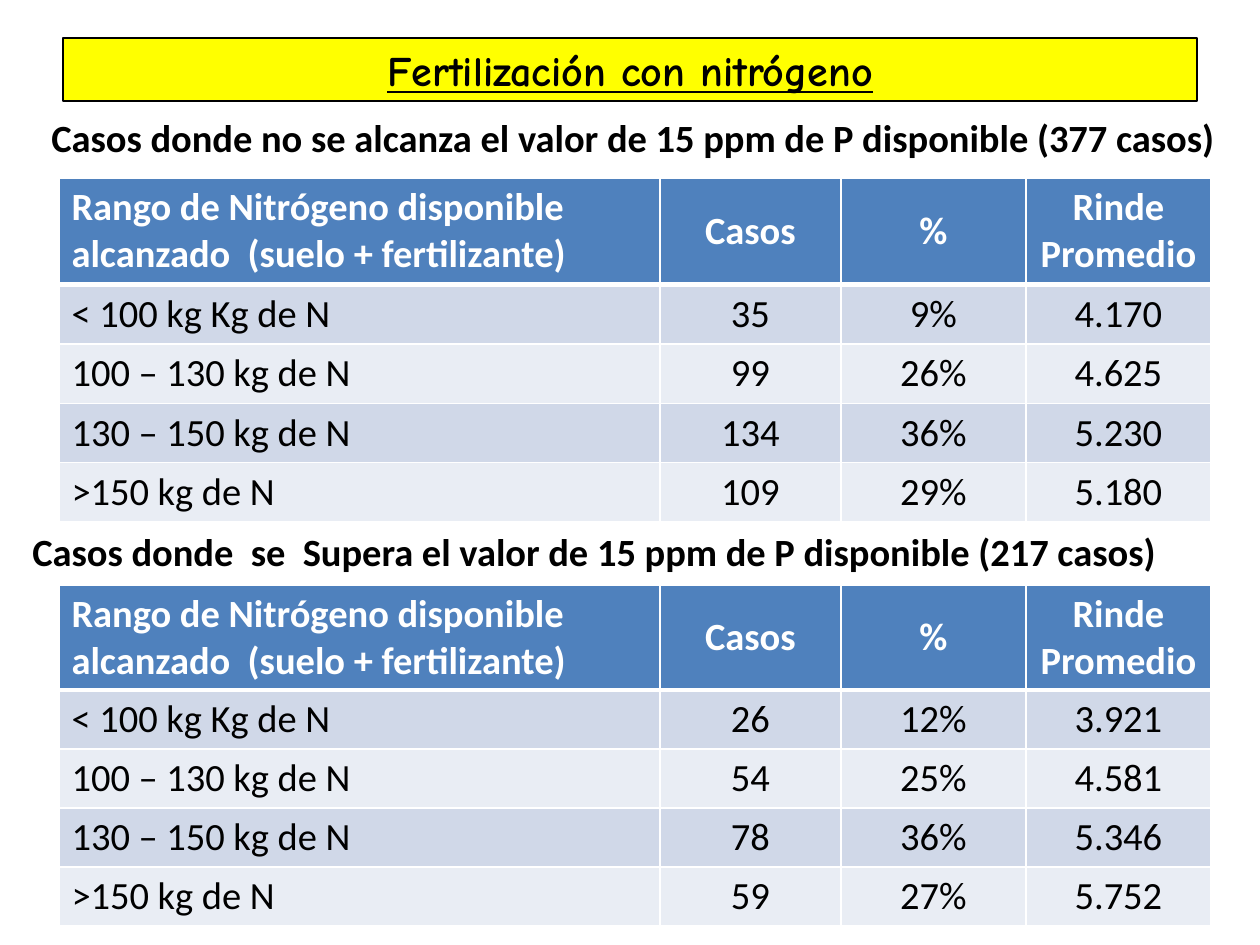
from lxml.etree import SubElement
from pptx import Presentation
from pptx.dml.color import RGBColor
from pptx.enum.text import MSO_ANCHOR, MSO_AUTO_SIZE, PP_ALIGN
from pptx.oxml.ns import qn
from pptx.util import Emu, Pt

SCALE = 914400 / 126
COLUMN_WIDTHS = [601, 181, 185, 185]
HEADER_HEIGHT = 103
ROW_HEIGHT = 59
HEADERS = ["Rango de Nitrógeno disponible alcanzado  (suelo + fertilizante)",
           "Casos", "%", "Rinde Promedio"]
RANGES = ["< 100 kg Kg de N", "100 – 130 kg de N", "130 – 150 kg de N", ">150 kg de N"]
LOW_PHOSPHORUS = [("35", "9%", "4.170"), ("99", "26%", "4.625"),
                  ("134", "36%", "5.230"), ("109", "29%", "5.180")]
HIGH_PHOSPHORUS = [("26", "12%", "3.921"), ("54", "25%", "4.581"),
                   ("78", "36%", "5.346"), ("59", "27%", "5.752")]


def px(length):
    return Emu(round(length * SCALE))


def color(value):
    return RGBColor.from_string(value)


def fill_with(target, value):
    target.fill.solid()
    target.fill.fore_color.rgb = color(value)


def add_run(paragraph, text, size=22, font="Calibri", ink="000000", bold=False, underline=None):
    run = paragraph.add_run()
    run.text = text
    run.font.size = Pt(size)
    run.font.name = font
    run.font.bold = bold
    run.font.underline = underline
    run.font.color.rgb = color(ink)


def set_borders(cell, top, bottom):
    properties = cell._tc.get_or_add_tcPr()
    widths = {"a:lnL": 1, "a:lnR": 1, "a:lnT": top, "a:lnB": bottom}
    for position, (side, width) in enumerate(widths.items()):
        line = SubElement(properties, qn(side), w=str(Pt(width)))
        fill = SubElement(line, qn("a:solidFill"))
        SubElement(fill, qn("a:srgbClr"), val="FFFFFF")
        properties.insert(position, line)


def place_title(slide, left, top, width, height):
    title = slide.shapes.title
    title.left, title.top, title.width, title.height = map(px, (left, top, width, height))
    fill_with(title, "FFFF00")
    title.line.color.rgb = color("000000")
    title.line.width = Pt(0.75)
    frame = title.text_frame
    frame.auto_size = MSO_AUTO_SIZE.NONE
    frame.vertical_anchor = MSO_ANCHOR.MIDDLE
    paragraph = frame.paragraphs[0]
    paragraph.alignment = PP_ALIGN.CENTER
    add_run(paragraph, "Fertilización con nitrógeno", 24, "Comic Neue", bold=True, underline=True)


def add_caption(slide, left, top, width, height, text):
    shape = slide.shapes.add_textbox(*map(px, (left, top, width, height)))
    frame = shape.text_frame
    frame.word_wrap = True
    frame.auto_size = MSO_AUTO_SIZE.SHAPE_TO_FIT_TEXT
    add_run(frame.paragraphs[0], text, bold=True)


def format_cell(cell, text, row, column):
    header = row == 0
    fill_with(cell, "4F81BD" if header else ("E9EDF4", "D0D8E8")[row % 2])
    set_borders(cell, 3 if row == 1 else 1, 3 if header else 1)
    paragraph = cell.text_frame.paragraphs[0]
    if column > 0:
        cell.vertical_anchor = MSO_ANCHOR.MIDDLE
        paragraph.alignment = PP_ALIGN.CENTER
    if column > 1 and not header:
        cell.margin_left = cell.margin_right = cell.margin_top = cell.margin_bottom = 0
    add_run(paragraph, text, ink="FFFFFF" if header else "000000", bold=header)


def add_yield_table(slide, left, top, results):
    rows = [HEADERS] + [[label, *values] for label, values in zip(RANGES, results)]
    height = HEADER_HEIGHT + ROW_HEIGHT * len(results)
    table = slide.shapes.add_table(len(rows), len(HEADERS), px(left), px(top),
                                   px(sum(COLUMN_WIDTHS)), px(height)).table
    for column, width in zip(table.columns, COLUMN_WIDTHS):
        column.width = px(width)
    for row, texts in enumerate(rows):
        table.rows[row].height = px(ROW_HEIGHT if row else HEADER_HEIGHT)
        for column, text in enumerate(texts):
            format_cell(table.cell(row, column), text, row, column)


def main():
    presentation = Presentation()
    presentation.slide_width = px(1260)
    presentation.slide_height = px(945)
    slide = presentation.slides.add_slide(presentation.slide_layouts[5])
    place_title(slide, 63, 38, 1134, 63)
    add_yield_table(slide, 59, 178, LOW_PHOSPHORUS)
    add_caption(slide, 39, 108, 1221, 59,
                "Casos donde no se alcanza el valor de 15 ppm de P disponible (377 casos)")
    add_yield_table(slide, 59, 585, HIGH_PHOSPHORUS)
    add_caption(slide, 20, 522, 1221, 59,
                "Casos donde  se  Supera el valor de 15 ppm de P disponible (217 casos)")
    presentation.save("out.pptx")


if __name__ == "__main__":
    main()
